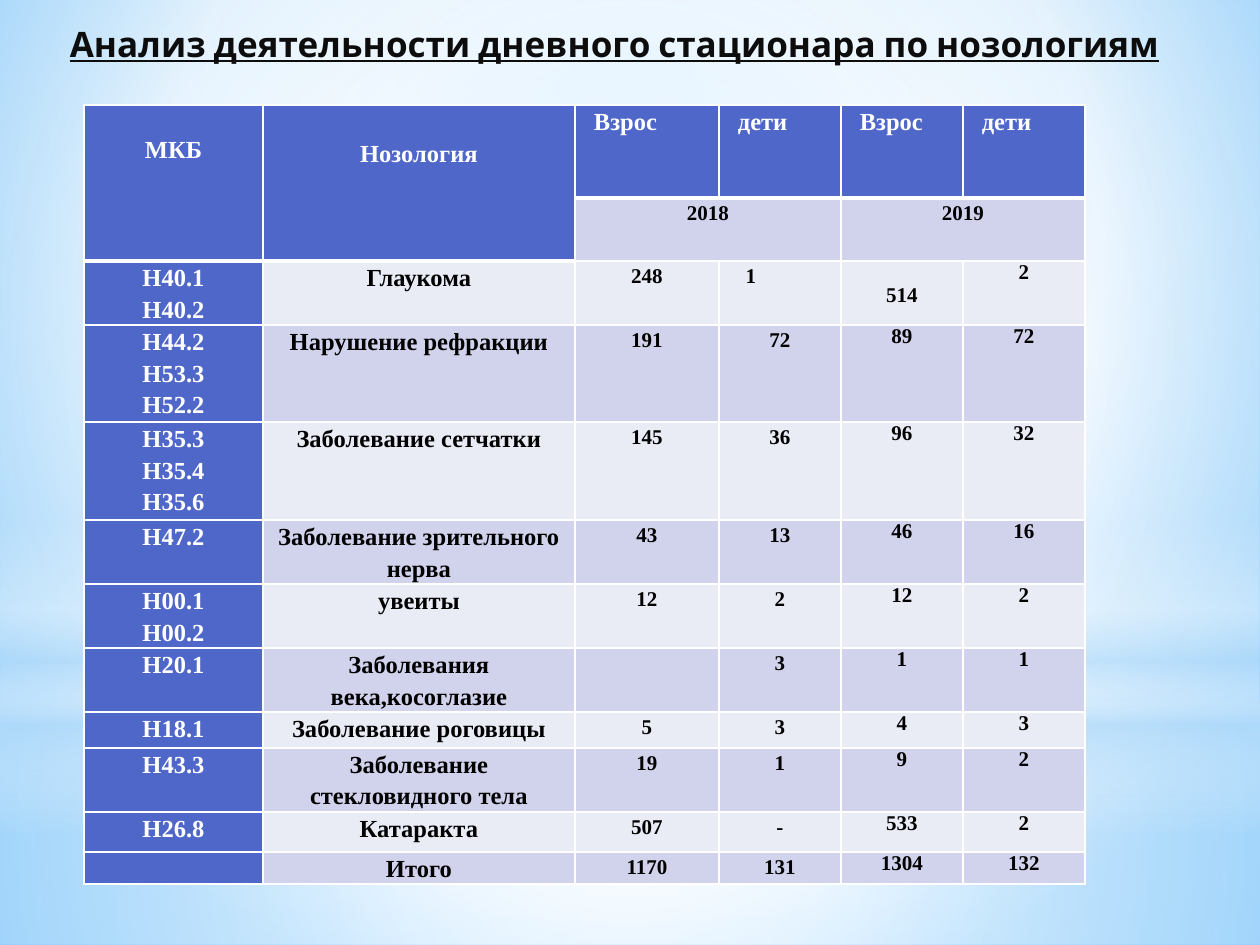
from lxml import etree
from pptx import Presentation
from pptx.dml.color import RGBColor
from pptx.enum.shapes import MSO_SHAPE
from pptx.enum.text import MSO_ANCHOR, MSO_AUTO_SIZE, PP_ALIGN
from pptx.oxml.ns import qn
from pptx.util import Emu, Pt

RECT, OVAL = MSO_SHAPE.RECTANGLE, MSO_SHAPE.OVAL
TOP, FIXED = MSO_ANCHOR.TOP, MSO_AUTO_SIZE.NONE
LEFT, CENTER = PP_ALIGN.LEFT, PP_ALIGN.CENTER
WHITE = RGBColor(0xFF, 0xFF, 0xFF)
BLACK = RGBColor(0, 0, 0)
INK = RGBColor(0x0D, 0x0D, 0x0D)
BLUE = RGBColor(0x4E, 0x67, 0xC8)
DARK = RGBColor(0xD0, 0xD3, 0xEB)
PALE = RGBColor(0xE9, 0xEB, 0xF5)
SKY = RGBColor(0xB4, 0xDC, 0xFA)
MIST = RGBColor(0x9E, 0xD5, 0xFF)
AZURE = RGBColor(0x5B, 0xB9, 0xFF)

TITLE = "Анализ деятельности дневного стационара по нозологиям"
HEAD = [
    ("МКБ", "Нозология", "Взрос", "дети", "Взрос", "дети"),
    ("", "", "2018", "", "2019", ""),
]
BODY = [
    ("Н40.1\nН40.2", "Глаукома", "248", "1", "514", "2"),
    ("Н44.2\nН53.3\nН52.2", "Нарушение рефракции", "191", "72", "89", "72"),
    ("Н35.3\nН35.4\nН35.6", "Заболевание сетчатки", "145", "36", "96", "32"),
    ("Н47.2", "Заболевание зрительного нерва", "43", "13", "46", "16"),
    ("Н00.1\nН00.2", "увеиты", "12", "2", "12", "2"),
    ("Н20.1", "Заболевания века,косоглазие", "", "3", "1", "1"),
    ("Н18.1", "Заболевание роговицы", "5", "3", "4", "3"),
    ("Н43.3", "Заболевание стекловидного тела", "19", "1", "9", "2"),
    ("Н26.8", "Катаракта", "507", "-", "533", "2"),
    ("", "Итого", "1170", "131", "1304", "132"),
]
COLS = [179, 312, 144, 122, 122, 122]
ROWS = [93, 63, 64, 97, 98, 64, 64, 64, 36, 64, 40, 32]
SPANS = [((0, 0), (1, 0)), ((0, 1), (1, 1)), ((1, 2), (1, 3)), ((1, 4), (1, 5))]
DROP = {(0, 0): 28, (0, 1): 32, (2, 4): 23}
PUSH = {(2, 3): 67}

MID = (50, 50, 50, 50)
BACK = [(0, MIST, 100), (60, WHITE, 100), (100, AZURE, 100)]
GLOWS = [
    (RECT, (0, 703, 1260, 242), MID,
     [(0, WHITE, 91), (37, WHITE, 76), (100, SKY, 79)]),
    (RECT, (0, 0, 1260, 703), MID,
     [(0, WHITE, 89), (48, WHITE, 62), (100, SKY, 79)]),
    (RECT, (0, 519, 1260, 315), None,
     [(0, WHITE, 0), (29, WHITE, 30), (45, SKY, 40),
      (55, WHITE, 26), (65, SKY, 60), (100, WHITE, 0)]),
    (OVAL, (0, 221, 1260, 703), MID, [(0, WHITE, 100), (56, WHITE, 0)]),
]


def px(n):
    return Emu(round(n * 914400 / 126))


def node(up, tag, **attrs):
    return etree.SubElement(up, qn(tag), {k: str(v) for k, v in attrs.items()})


def blend(root, stops, focus):
    old = next(root.iter(qn("a:solidFill")))
    grad = etree.Element(qn("a:gradFill"), rotWithShape="1")
    group = node(grad, "a:gsLst")
    for pos, color, alpha in stops:
        stop = node(group, "a:gs", pos=pos * 1000)
        tint = node(stop, "a:srgbClr", val=color)
        node(tint, "a:alpha", val=alpha * 1000)
    if focus:
        ring = node(grad, "a:path", path="circle")
        node(ring, "a:fillToRect", **{k: v * 1000 for k, v in zip("ltrb", focus)})
    else:
        node(grad, "a:lin", ang=5400000, scaled=0)
    old.getparent().replace(old, grad)


def edge(cell, r, c):
    props = cell._tc.get_or_add_tcPr()
    thick = r == 0 or (r == 1 and c < 2)
    under = (r == 1 and c > 1) or (r == 2 and c < 2)
    widths = {"L": 1, "R": 1, "T": 3 if under else 1, "B": 3 if thick else 1}
    for i, (side, width) in enumerate(widths.items()):
        line = etree.Element(qn("a:ln" + side), w=str(Pt(width)))
        node(node(line, "a:solidFill"), "a:srgbClr", val=WHITE)
        props.insert(i, line)


def style(cell, text, r, c):
    blue = r == 0 or c == 0 or (r == 1 and c < 2)
    top = r == 0 and c > 1
    size = Pt(14 if blue or c == 1 else 12)
    cell.text_frame.text = text
    cell.fill.solid()
    cell.fill.fore_color.rgb = BLUE if blue else DARK if r % 2 else PALE
    cell.margin_left = px(19 if top else 9)
    cell.margin_right = px(PUSH.get((r, c), 9))
    cell.margin_top = px(DROP.get((r, c), 0))
    cell.margin_bottom = 0
    cell.vertical_anchor = TOP
    for par in cell.text_frame.paragraphs:
        par.alignment = LEFT if top else CENTER
        par.line_spacing = 1.15 if c < 4 or r < 2 else 1.0
        par._p.get_or_add_endParaRPr().set("sz", str(int(size.pt * 100)))
        for run in par.runs:
            run.font.name = "Times New Roman"
            run.font.size = size
            run.font.bold = True
            run.font.color.rgb = WHITE if blue else BLACK
    edge(cell, r, c)


def main():
    deck = Presentation()
    deck.slide_width, deck.slide_height = px(1260), px(945)
    slide = deck.slides.add_slide(deck.slide_layouts[5])
    slide.background.fill.solid()
    slide.background.fill.fore_color.rgb = WHITE
    blend(slide._element, BACK, (20, 10, 20, 60))

    for kind, box, focus, stops in GLOWS:
        glow = slide.shapes.add_shape(kind, *map(px, box))
        glow.shadow.inherit = False
        glow.line.fill.background()
        glow.fill.solid()
        blend(glow._element, stops, focus)

    title = slide.shapes.title
    slide.shapes._spTree.append(title._element)
    title.left, title.top, title.width, title.height = map(px, (54, 16, 1121, 188))
    frame = title.text_frame
    frame.text = TITLE
    frame.word_wrap = True
    frame.auto_size = FIXED
    frame.vertical_anchor = TOP
    frame.paragraphs[0].alignment = CENTER
    font = frame.paragraphs[0].runs[0].font
    font.name, font.size = "Cabin", Pt(20)
    font.bold = font.underline = True
    font.color.rgb = INK

    box = map(px, (84, 105, sum(COLS), sum(ROWS)))
    table = slide.shapes.add_table(len(ROWS), len(COLS), *box).table
    for col, width in zip(table.columns, COLS):
        col.width = px(width)
    for row, height in zip(table.rows, ROWS):
        row.height = px(height)
    for start, end in SPANS:
        table.cell(*start).merge(table.cell(*end))
    for r, line in enumerate(HEAD + BODY):
        for c, text in enumerate(line):
            style(table.cell(r, c), text, r, c)

    deck.save("out.pptx")


if __name__ == "__main__":
    main()
